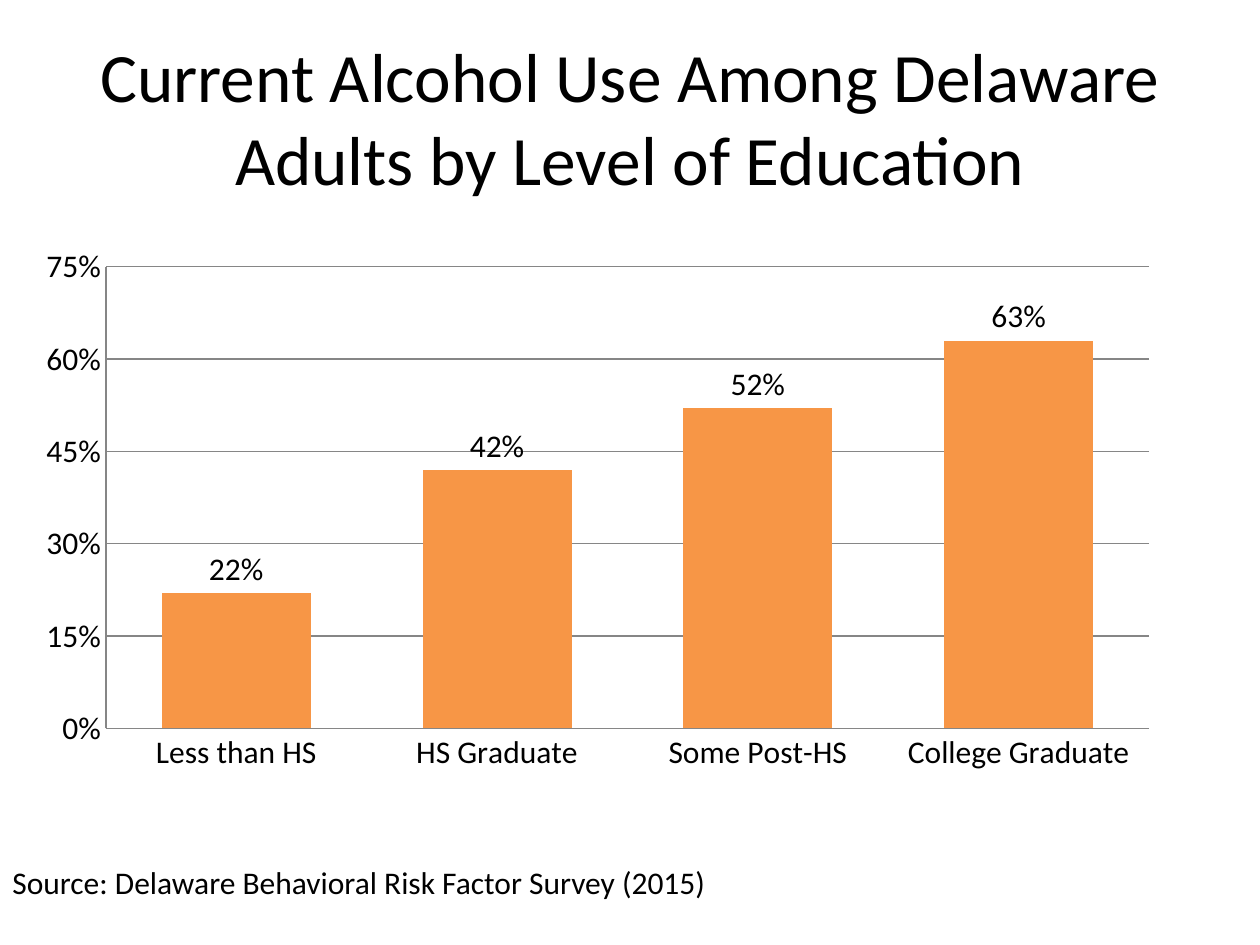
from dataclasses import dataclass
from typing import Any

from lxml import etree
from pptx import Presentation
from pptx.chart.data import CategoryChartData
from pptx.dml.color import RGBColor
from pptx.enum.chart import XL_CHART_TYPE, XL_LABEL_POSITION, XL_TICK_MARK
from pptx.enum.text import MSO_ANCHOR, PP_ALIGN
from pptx.oxml.ns import qn
from pptx.util import Inches, Pt

COLUMNS = XL_CHART_TYPE.COLUMN_CLUSTERED
OUTSIDE_END = XL_LABEL_POSITION.OUTSIDE_END
NO_TICK = XL_TICK_MARK.NONE
MIDDLE, BOTTOM = MSO_ANCHOR.MIDDLE, MSO_ANCHOR.BOTTOM
LEFT, CENTER = PP_ALIGN.LEFT, PP_ALIGN.CENTER
WIDTH, HEIGHT = Inches(10), Inches(7.5)
TITLE_ONLY = 5


def color(value):
    return RGBColor.from_string(value)


def format_font(font, name, size, fill):
    font.name = name
    font.size = Pt(size)
    font.bold = False
    font.color.rgb = color(fill)


def write_text(frame, text, font, size, fill, align=LEFT, anchor=MIDDLE):
    frame.word_wrap = True
    frame.vertical_anchor = anchor
    paragraph = frame.paragraphs[0]
    paragraph.alignment = align
    run = paragraph.add_run()
    run.text = text
    format_font(run.font, font, size, fill)


def set_plot_layout(chart, **shares):
    plot_area = chart._chartSpace.chart.plotArea
    for old_layout in plot_area.findall(qn("c:layout")):
        plot_area.remove(old_layout)
    layout = etree.Element(qn("c:layout"))
    manual = etree.SubElement(layout, qn("c:manualLayout"))
    settings = {"layoutTarget": "inner", "xMode": "edge", "yMode": "edge", **shares}
    for tag, value in settings.items():
        etree.SubElement(manual, qn(f"c:{tag}")).set("val", str(value))
    plot_area.insert(0, layout)


@dataclass
class SlideBuilder:
    slide: Any
    font: str = "Calibri"
    ink: str = "000000"
    line: str = "868686"
    accent: str = "F79646"
    title_size: float = 39.6
    body_size: float = 18

    def box(self, left, top, width, height):
        return (int(left * WIDTH), int(top * HEIGHT),
                int(width * WIDTH), int(height * HEIGHT))

    def title(self, text, *shares):
        shape = self.slide.shapes.title
        shape.left, shape.top, shape.width, shape.height = self.box(*shares)
        write_text(shape.text_frame, text, font=self.font, size=self.title_size,
                   fill=self.ink, align=CENTER)

    def note(self, text, *shares):
        shape = self.slide.shapes.add_textbox(*self.box(*shares))
        write_text(shape.text_frame, text, font=self.font, size=self.body_size,
                   fill=self.ink, anchor=BOTTOM)

    def column_chart(self, values, maximum, step, *shares):
        data = CategoryChartData(number_format="0%")
        data.categories = list(values)
        data.add_series("Series 1", list(values.values()))
        chart = self.slide.shapes.add_chart(COLUMNS, *self.box(*shares), data).chart
        chart.has_title = False
        chart.has_legend = False
        format_font(chart.font, self.font, self.body_size, self.ink)
        set_plot_layout(chart, x=0.06, y=0.04, w=0.92, h=0.74)

        value_axis = chart.value_axis
        value_axis.minimum_scale = 0
        value_axis.maximum_scale = maximum
        value_axis.major_unit = step
        value_axis.has_major_gridlines = True
        value_axis.tick_labels.number_format = "0%"
        value_axis.tick_labels.number_format_is_linked = False
        lines = [value_axis.major_gridlines.format.line]
        for axis in (value_axis, chart.category_axis):
            axis.major_tick_mark = axis.minor_tick_mark = NO_TICK
            lines.append(axis.format.line)
        for line in lines:
            line.color.rgb = color(self.line)
            line.width = Pt(0.75)

        plot = chart.plots[0]
        plot.gap_width = 75
        plot.overlap = -25
        plot.vary_by_categories = False
        fill = plot.series[0].format.fill
        fill.solid()
        fill.fore_color.rgb = color(self.accent)
        plot.has_data_labels = True
        labels = plot.data_labels
        labels.show_value = True
        labels.number_format = "0%"
        labels.number_format_is_linked = False
        labels.position = OUTSIDE_END
        format_font(labels.font, self.font, self.body_size, self.ink)


def main():
    presentation = Presentation()
    presentation.slide_width, presentation.slide_height = WIDTH, HEIGHT
    layout = presentation.slide_layouts[TITLE_ONLY]
    builder = SlideBuilder(presentation.slides.add_slide(layout))
    builder.title("Current Alcohol Use Among Delaware Adults by Level of Education",
                  0.05, 0.04, 0.9, 1 / 6)
    builder.note("Source: Delaware Behavioral Risk Factor Survey (2015)",
                 0, 0.865, 0.71, 0.095)
    alcohol_use = {"Less than HS": 0.22, "HS Graduate": 0.42,
                   "Some Post-HS": 0.52, "College Graduate": 0.63}
    builder.column_chart(alcohol_use, 0.75, 0.15, 0.03, 0.256, 0.9, 0.66)
    presentation.save("out.pptx")


if __name__ == "__main__":
    main()
